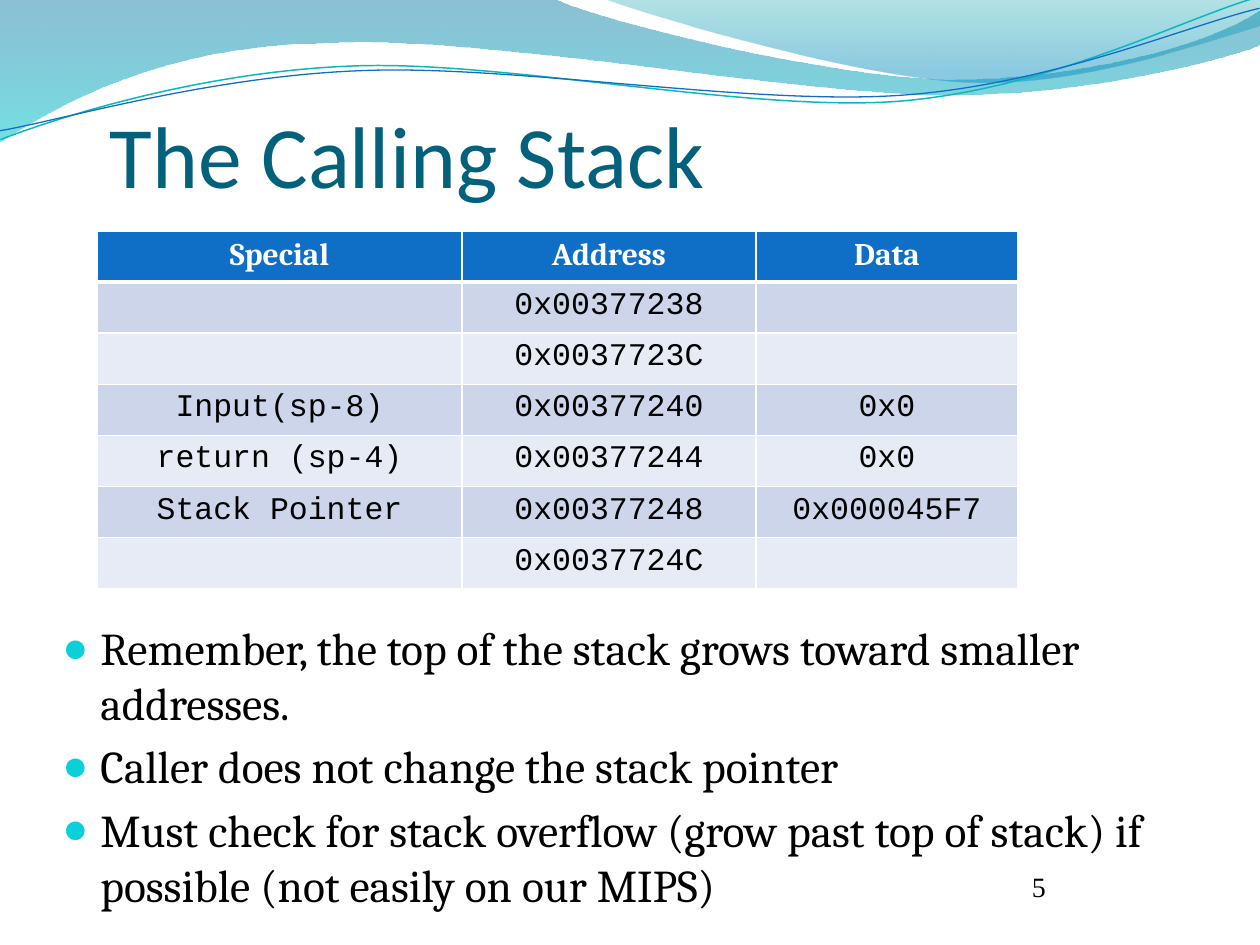
"""Build the calling stack slide: waves, title, stack table and notes."""
from pptx import Presentation
from pptx import util as u
from pptx.dml.color import RGBColor
from pptx.enum import text as t
from pptx.oxml import parse_xml
from pptx.oxml.ns import nsdecls, qn

PX = 914400 / 126
THEME = {
    "title": ("Calibri", 50, "04617B"),
    "body": ("Cambria", 26, "000000"),
    "head": ("Cambria", 18, "FFFFFF"),
    "cell": ("Courier New", 18, "000000"),
    "page": ("Times New Roman", 16, "000000"),
    "bullet": ("Times New Roman", 95, "0BD0D9"),
    "edge": "FFFFFF", "header": "0F6FC6", "bands": ("CCD5EA", "E7EBF5"),
}
TITLE = "The Calling Stack"
PAGE = "5"
NOTES = [
    "Remember, the top of the stack grows toward smaller addresses.",
    "Caller does not change the stack pointer",
    "Must check for stack overflow (grow past top of stack) if possible (not easily on our MIPS)",
]
ROWS = [
    ("Special", "Address", "Data"),
    ("", "0x00377238", ""),
    ("", "0x0037723C", ""),
    ("Input(sp-8)", "0x00377240", "0x0"),
    ("return (sp-4)", "0x00377244", "0x0"),
    ("Stack Pointer", "0x00377248", "0x000045F7"),
    ("", "0x0037724C", ""),
]
COLS = (365, 294, 262)
TALL = 358
BANDS = [
    ([[(0, 0)], [(554, -1)],
      [(600, 21), (837, 79), (955, 79)], [(1074, 79), (1207, 47), (1260, 11)],
      [(1261, 45)],
      [(1238, 55), (1096, 96), (940, 95)], [(784, 93), (481, 35), (324, 43)],
      [(163, 45), (58, 105), (-1, 142)], [(0, 0)]],
     [(0, "0074A1", 45), (1, "00C6CF", 55)]),
    ([[(604, -1)],
      [(641, 14), (859, 78), (969, 82)], [(1079, 87), (1211, 40), (1260, 26)],
      [(1260, 0)], [(604, -1)]],
     [(0, "00A1A9", 30), (0.8, "008BBF", 45)]),
]
TILT = 357.3
LINES = [
    ([[(-2, 110)],
      [(58, 90), (200, 52), (350, 53)], [(499, 53), (745, 118), (896, 114)],
      [(1049, 109), (1184, 45), (1260, 27)]], "0AB8BF", 0.85),
    ([[(-2, 101)],
      [(57, 94), (207, 57), (358, 58)], [(509, 58), (750, 112), (902, 108)],
      [(1052, 104), (1188, 52), (1262, 38)]], "0F6FC6", 0.75),
]


def px(*vals):
    return [u.Emu(round(v * PX)) for v in vals]


def rgb(code):
    return RGBColor.from_string(code)


def style(para, key, bold=False):
    face, size, color = THEME[key]
    for run in para.runs:
        font = run.font
        font.name, font.size, font.bold = face, u.Pt(size), bold
        font.color.rgb = rgb(color)


def wave(slide, segs, close):
    pts = sum(segs, [])
    pen = slide.shapes.build_freeform(*pts[0], scale=PX)
    pen.add_line_segments(pts[1:], close=close)
    shape = pen.convert_to_shape()
    shape.shadow.inherit = False
    steps = iter(list(shape._element.iter(qn("a:lnTo"))))
    for seg in segs[1:]:
        first = next(steps)
        if len(seg) == 3:
            curve = parse_xml(f'<a:cubicBezTo {nsdecls("a")}/>')
            first.addprevious(curve)
            for step in (first, next(steps), next(steps)):
                curve.append(step[0])
                step.getparent().remove(step)
    return shape


def add_waves(slide):
    for segs, stops in BANDS:
        shape = wave(slide, segs, True)
        shape.line.fill.background()
        shape.fill.gradient()
        shape.fill.gradient_angle = 270
        for stop, (pos, color, _) in zip(shape.fill.gradient_stops, stops):
            stop.position, stop.color.rgb = pos, rgb(color)
        tags = shape._element.spPr.iter(qn("a:srgbClr"))
        for tag, (_, _, alpha) in zip(tags, stops):
            tag.append(parse_xml(f'<a:alpha {nsdecls("a")} val="{alpha * 1000}"/>'))
    for segs, color, width in LINES:
        shape = wave(slide, segs, False)
        shape.rotation = TILT
        shape.fill.background()
        shape.line.color.rgb, shape.line.width = rgb(color), u.Pt(width)


def add_title(slide):
    title = slide.shapes.title
    slide.shapes._spTree.append(title._element)
    title.left, title.top, title.width, title.height = px(97, 94, 1071, 85)
    frame = title.text_frame
    frame.text = TITLE
    frame.auto_size = t.MSO_AUTO_SIZE.NONE
    frame.vertical_anchor = t.MSO_ANCHOR.TOP
    frame.margin_top = px(7)[0]
    para = frame.paragraphs[0]
    para.alignment = t.PP_ALIGN.LEFT
    style(para, "title")


def add_notes(slide):
    frame = slide.shapes.add_textbox(*px(50, 614, 1166, 577)).text_frame
    frame.word_wrap = True
    frame.text = "\n".join(NOTES)
    face, size, color = THEME["bullet"]
    for para in frame.paragraphs:
        para.space_before = u.Pt(5.2)
        style(para, "body")
        props = para._p.get_or_add_pPr()
        inset = px(38)[0]
        props.set("marL", str(inset))
        props.set("indent", str(-inset))
        for tag in (f'buClr {nsdecls("a")}><a:srgbClr val="{color}"/></a:buClr',
                    f'buSzPct {nsdecls("a")} val="{size * 1000}"/',
                    f'buFont {nsdecls("a")} typeface="{face}"/',
                    f'buChar {nsdecls("a")} char="●"/'):
            props.append(parse_xml(f"<a:{tag}>"))


def add_page(slide):
    frame = slide.shapes.add_textbox(*px(1032, 850, 136, 53)).text_frame
    frame.word_wrap = True
    frame.margin_left = frame.margin_right = frame.margin_top = frame.margin_bottom = 0
    frame.vertical_anchor = t.MSO_ANCHOR.BOTTOM
    frame.text = PAGE
    style(frame.paragraphs[0], "page")


def edge(cell, row):
    wide = {(0, "B"), (1, "T")}
    for side in "LRTB":
        width = u.Pt(3 if (row, side) in wide else 1)
        cell._tc.get_or_add_tcPr().append(parse_xml(
            f'<a:ln{side} {nsdecls("a")} w="{width}"><a:solidFill>'
            f'<a:srgbClr val="{THEME["edge"]}"/></a:solidFill></a:ln{side}>'))


def add_stack(slide):
    box = px(97, 231, sum(COLS), TALL)
    table = slide.shapes.add_table(len(ROWS), len(COLS), *box).table
    for col, width in zip(table.columns, COLS):
        col.width = px(width)[0]
    for r, row in enumerate(ROWS):
        table.rows[r].height = px(TALL / len(ROWS))[0]
        for c, word in enumerate(row):
            cell = table.cell(r, c)
            edge(cell, r)
            cell.fill.solid()
            cell.fill.fore_color.rgb = rgb(THEME["bands"][(r - 1) % 2] if r else THEME["header"])
            cell.text_frame.text = word
            para = cell.text_frame.paragraphs[0]
            para.alignment = t.PP_ALIGN.CENTER
            style(para, "cell" if r else "head", not r)


def main():
    deck = Presentation()
    deck.slide_width, deck.slide_height = px(1260, 945)
    slide = deck.slides.add_slide(deck.slide_layouts[5])
    for add in (add_waves, add_page, add_title, add_notes, add_stack):
        add(slide)
    deck.save("out.pptx")


if __name__ == "__main__":
    main()
